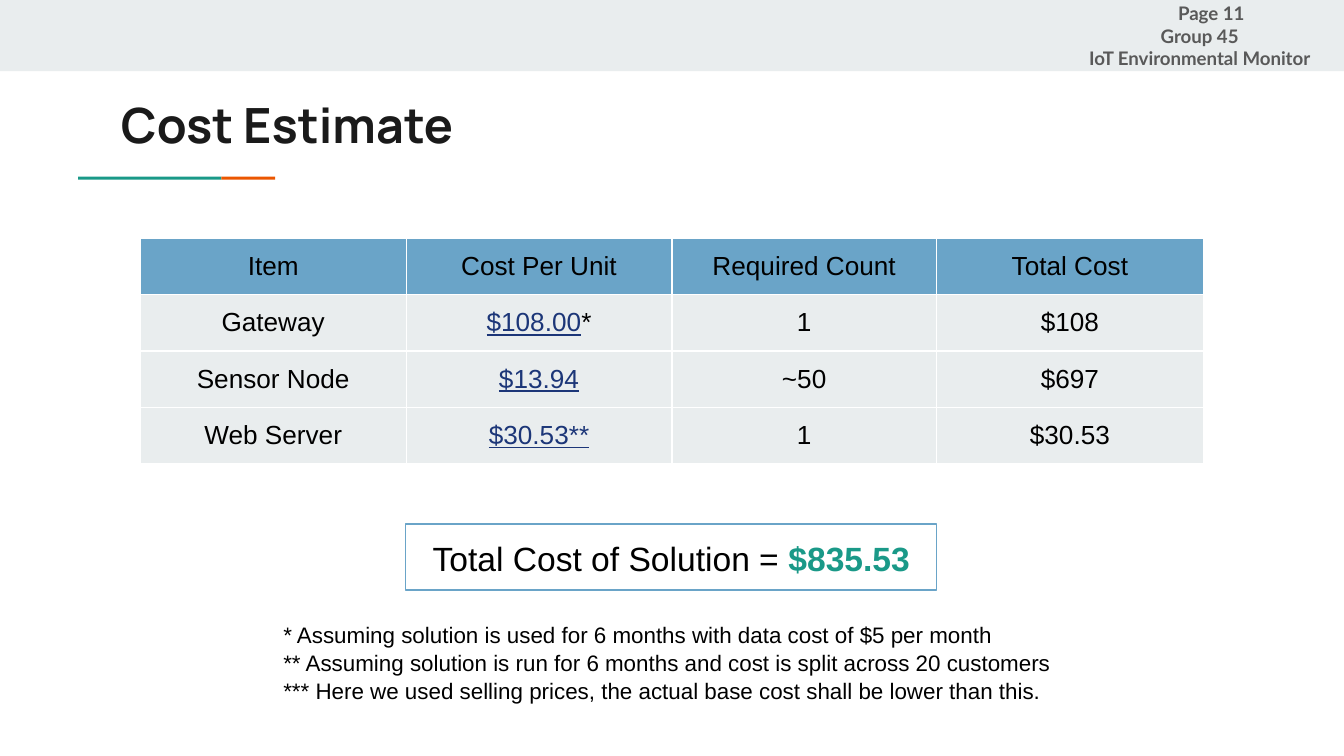
from lxml import etree
from pptx import Presentation
from pptx import util as u
from pptx.dml import color
from pptx.enum import shapes, text
from pptx.oxml import ns

Pt = u.Pt
hues = {"band": "E9EDEE", "head": "6AA4C8", "green": "1A9988", "orange": "EB5600",
        "link": "1C3678", "ink": "000000", "title": "1A1A1A", "gray": "595959"}
rgb = {key: color.RGBColor.from_string(val) for key, val in hues.items()}
body = {"name": "Arial", "size": Pt(14), "hue": "ink"}
link = {**body, "hue": "link", "underline": True}
note = {**body, "size": Pt(12)}
total = {**body, "size": Pt(18)}
sum_fmt = {**total, "hue": "green", "bold": True}
head = {"name": "Manrope", "size": Pt(26), "hue": "title", "bold": True}
tag = {"name": "Lato", "size": Pt(10), "hue": "gray", "bold": True}
LEFT, MID = text.PP_ALIGN.LEFT, text.PP_ALIGN.CENTER
TOP, MIDDLE = text.MSO_ANCHOR.TOP, text.MSO_ANCHOR.MIDDLE


def write(frame, lines, align, anchor=TOP):
    frame.word_wrap = True
    frame.vertical_anchor = anchor
    for side in ("left", "right", "top", "bottom"):
        setattr(frame, f"margin_{side}", Pt(7.2))
    for i, runs in enumerate(lines):
        para = frame.add_paragraph() if i else frame.paragraphs[0]
        para.alignment = align
        for words, fmt in runs:
            run = para.add_run()
            run.text = words
            for key, val in fmt.items():
                if key == "hue":
                    run.font.color.rgb = rgb[val]
                else:
                    setattr(run.font, key, val)


def block(x, y, w, h, fill=None):
    rect = slide.shapes.add_shape(shapes.MSO_SHAPE.RECTANGLE, Pt(x), Pt(y), Pt(w), Pt(h))
    rect.shadow.inherit = False
    rect.line.fill.background()
    if fill:
        rect.fill.solid()
        rect.fill.fore_color.rgb = rgb[fill]
    else:
        rect.fill.background()
    return rect


deck = Presentation()
deck.slide_width, deck.slide_height = Pt(720), Pt(405)
slide = deck.slides.add_slide(deck.slide_layouts[5])

block(0, 0, 720, 38.2, "band")
block(41.8, 94.7, 76.8, 1.6, "green")
block(118.6, 94.7, 28.8, 1.6, "orange")

title = slide.shapes.title
title.left, title.top, title.width, title.height = Pt(57.6), Pt(43.9), Pt(605.5), Pt(42.5)
write(title.text_frame, [[("Cost Estimate", head)]], LEFT)

rows = [
    ["Item", "Cost Per Unit", "Required Count", "Total Cost"],
    ["Gateway", "$108.00", "1", "$108"],
    ["Sensor Node", "$13.94", "~50", "$697"],
    ["Web Server", "$30.53**", "1", "$30.53"],
]
wides = [142.4, 142.4, 141.7, 143.1]
grid = slide.shapes.add_table(4, 4, Pt(75.2), Pt(127.7), Pt(sum(wides)), Pt(120)).table
for col, wide in zip(grid.columns, wides):
    col.width = Pt(wide)
for r, row in enumerate(rows):
    grid.rows[r].height = Pt(30)
    for c, words in enumerate(row):
        cell = grid.cell(r, c)
        runs = [(words, link if r and c == 1 else body)]
        if words == "$108.00":
            runs.append(("*", body))
        write(cell.text_frame, [runs], MID)
        for side in ("left", "right", "top", "bottom"):
            setattr(cell, f"margin_{side}", Pt(7.2))
        props = cell._tc.get_or_add_tcPr()
        for edge in ("lnL", "lnR", "lnT", "lnB"):
            line = etree.SubElement(props, ns.qn(f"a:{edge}"), w=str(Pt(0.75)))
            fill = etree.SubElement(line, ns.qn("a:solidFill"))
            etree.SubElement(fill, ns.qn("a:srgbClr"), val="FFFFFF")
        cell.fill.solid()
        cell.fill.fore_color.rgb = rgb["band" if r else "head"]

notes = [
    "* Assuming solution is used for 6 months with data cost of $5 per month",
    "** Assuming solution is run for 6 months and cost is split across 20 customers",
    "*** Here we used selling prices, the actual base cost shall be lower than this.",
]
foot = slide.shapes.add_textbox(Pt(144.7), Pt(324.7), Pt(440), Pt(69.8)).text_frame
write(foot, [[(words, note)] for words in notes], LEFT)
for para in foot.paragraphs:
    para.line_spacing = 1.05

box = block(217.4, 280.8, 284.4, 35.3)
box.line.color.rgb = rgb["head"]
box.line.width = Pt(0.75)
write(box.text_frame, [[("Total Cost of Solution = ", total), ("$835.53", sum_fmt)]], MID)

names = ["Page 11", "Group 45", "IoT Environmental Monitor"]
corner = slide.shapes.add_textbox(Pt(571), Pt(3.6), Pt(143.3), Pt(31)).text_frame
write(corner, [[(words, tag)] for words in names], MID, MIDDLE)
page = corner.paragraphs[0]
page.alignment = LEFT
page._p.get_or_add_pPr().set("indent", str(Pt(53)))

deck.save("out.pptx")
